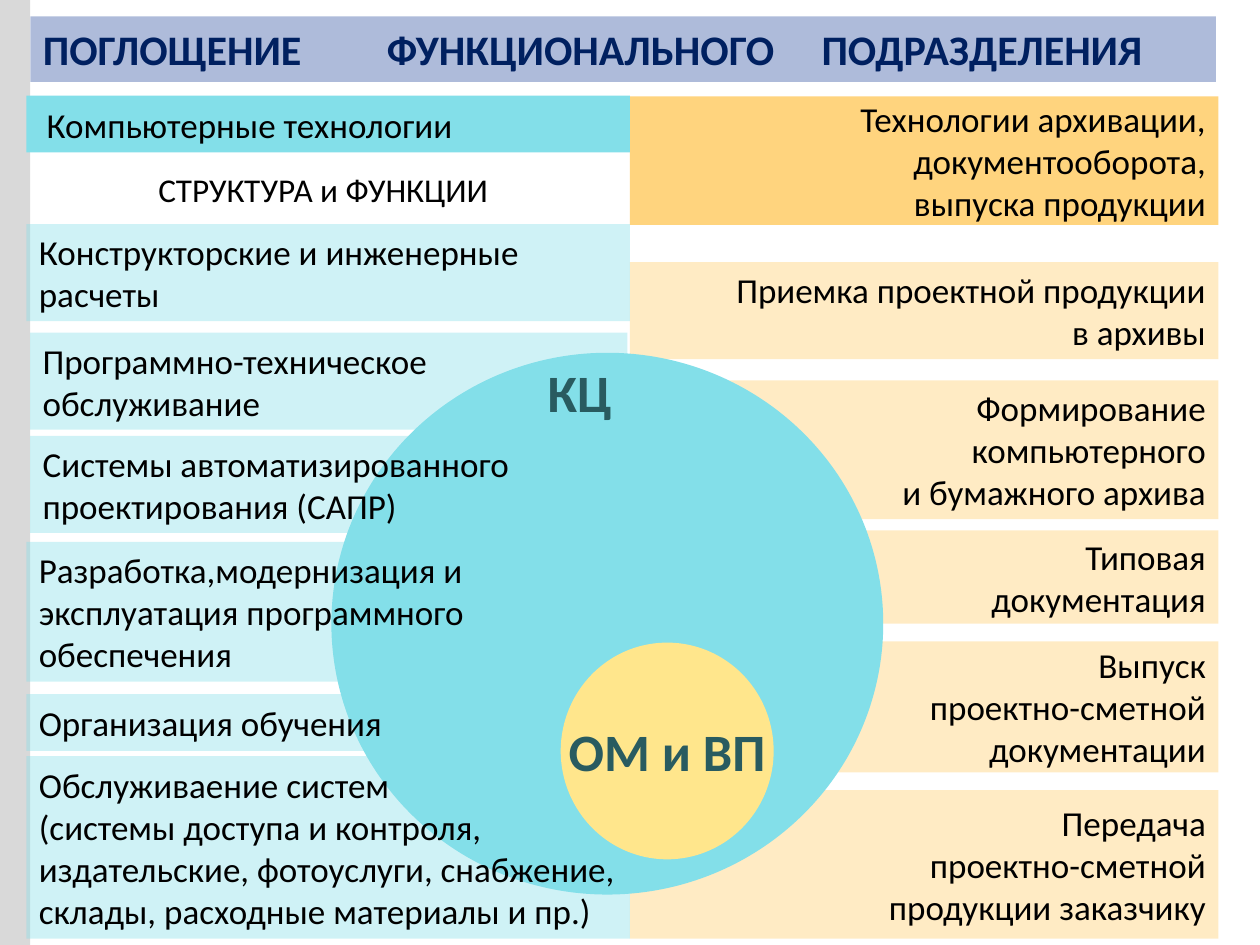
from lxml.etree import SubElement
from pptx import Presentation
from pptx.dml.color import RGBColor
from pptx.enum.shapes import MSO_SHAPE
from pptx.enum.text import MSO_ANCHOR, MSO_AUTO_SIZE, PP_ALIGN
from pptx.oxml.ns import qn
from pptx.util import Inches, Pt

THEME = dict(
    font="Calibri",
    ink="000000", navy="002060", teal_ink="295B60",
    teal="83DFE9", amber="FFCC66", blue="8FA2CD", yellow="FFE68C", grey="D9D9D9",
    title=24, body=20, caption=19, label=30,
)
LEFT, CENTER, RIGHT = PP_ALIGN.LEFT, PP_ALIGN.CENTER, PP_ALIGN.RIGHT

prs = Presentation()
prs.slide_width, prs.slide_height = Inches(10), Inches(7.5)
COL, ROW = prs.slide_width / 100, prs.slide_height / 75
s = prs.slides.add_slide(prs.slide_layouts[5])


def place(sp, box, fill=None, alpha=100):
    units = (COL, ROW, COL, ROW)
    for name, n, unit in zip(("left", "top", "width", "height"), box, units):
        setattr(sp, name, round(n * unit))
    if fill:
        sp.fill.solid()
        sp.fill.fore_color.rgb = RGBColor.from_string(THEME[fill])
        sp.line.fill.background()
        if alpha < 100:
            clr = sp.fill._xPr.find(f"{qn('a:solidFill')}/{qn('a:srgbClr')}")
            SubElement(clr, qn("a:alpha"), val=str(alpha * 1000))
    return sp


def write(sp, lines, align, size="body", ink="ink", bold=False, **frame):
    tf = sp.text_frame
    base = dict(word_wrap=True, auto_size=MSO_AUTO_SIZE.NONE,
                vertical_anchor=MSO_ANCHOR.MIDDLE)
    for name, value in {**base, **frame}.items():
        setattr(tf, name, value)
    for i, line in enumerate(lines):
        p = tf.paragraphs[0] if i == 0 else tf.add_paragraph()
        p.alignment = align
        r = p.add_run()
        r.text = line
        for name, value in dict(name=THEME["font"], size=Pt(THEME[size]), bold=bold).items():
            setattr(r.font, name, value)
        r.font.color.rgb = RGBColor.from_string(THEME[ink])


title = place(s.shapes.title, (2.4, 1.3, 94.1, 5.2), "blue", 72)
write(title, ["ПОГЛОЩЕНИЕ\tФУНКЦИОНАЛЬНОГО\tПОДРАЗДЕЛЕНИЯ"], LEFT, "title", "navy", True)
tabs = SubElement(title.text_frame.paragraphs[0]._p.get_or_add_pPr(), qn("a:tabLst"))
for col in (27.3, 61.8):
    SubElement(tabs, qn("a:tab"), pos=str(round(col * COL)), algn="l")

right_rows = [
    (7.65, 10.2, 84, ["Технологии архивации,", "документооборота,", "выпуска продукции"]),
    (20.8, 7.7, 38, ["Приемка проектной продукции", "в архивы"]),
    (30.2, 11, 38, ["Формирование", "компьютерного", "и бумажного архива"]),
    (42.1, 7.4, 38, ["Типовая", "документация"]),
    (50.9, 10.4, 38, ["Выпуск", "проектно-сметной", "документации"]),
    (62.7, 11.8, 38, ["Передача", "проектно-сметной", "продукции заказчику"]),
]
left_rows = [
    (2.1, 7.6, 47.9, 4.5, 100, ["Компьютерные технологии"]),
    (2.1, 17.8, 47.9, 7.7, 38, ["Конструкторские и инженерные", "расчеты"]),
    (2.4, 26.4, 47.4, 7.7, 38, ["Программно-техническое обслуживание"]),
    (2.4, 34.6, 39.6, 7.7, 38, ["Системы автоматизированного", "проектирования (САПР)"]),
    (2.1, 43, 47.6, 11.1, 38,
     ["Разработка,модернизация и", "эксплуатация программного", "обеспечения"]),
    (2.1, 55.1, 47.7, 4.5, 38, ["Организация обучения"]),
    (2.1, 60, 47.9, 14.5, 38,
     ["Обслуживаение систем", "(системы доступа и контроля,",
      "издательские, фотоуслуги, снабжение, склады, расходные материалы и пр.)"]),
]

panels = [(MSO_SHAPE.RECTANGLE, (50, top, 46.7, height), "amber", alpha, lines, dict(align=RIGHT))
          for top, height, alpha, lines in right_rows]
panels += [
    (MSO_SHAPE.OVAL, (26.3, 28, 43.8, 43), "teal", 100, [], dict(align=CENTER)),
    (MSO_SHAPE.RECTANGLE, (0, 0, 2.4, 75), "grey", 100, [], dict(align=LEFT)),
]
for left, top, width, height, alpha, lines in left_rows:
    inset = round((1.6 if alpha == 100 else 1) * COL)
    panels.append((MSO_SHAPE.RECTANGLE, (left, top, width, height), "teal", alpha, lines,
                   dict(align=LEFT, margin_left=inset)))
panels.append((MSO_SHAPE.OVAL, (44.5, 51, 16.9, 17.2), "yellow", 100, ["ОМ и ВП"],
               dict(align=CENTER, size="label", ink="teal_ink", bold=True, word_wrap=False)))

for kind, box, fill, alpha, lines, fmt in panels:
    sp = place(s.shapes.add_shape(kind, 0, 0, 0, 0), box, fill, alpha)
    sp.shadow.inherit = False
    write(sp, lines, **fmt)

labels = [
    ((11.4, 12.9, 28.5, 4.2), "СТРУКТУРА и ФУНКЦИИ", dict(size="caption")),
    ((39.8, 28, 12.4, 6.1), "КЦ", dict(size="label", ink="teal_ink", bold=True)),
]
for box, text, fmt in labels:
    sp = place(s.shapes.add_textbox(0, 0, 0, 0), box)
    write(sp, [text], CENTER, **fmt)

prs.save("out.pptx")
